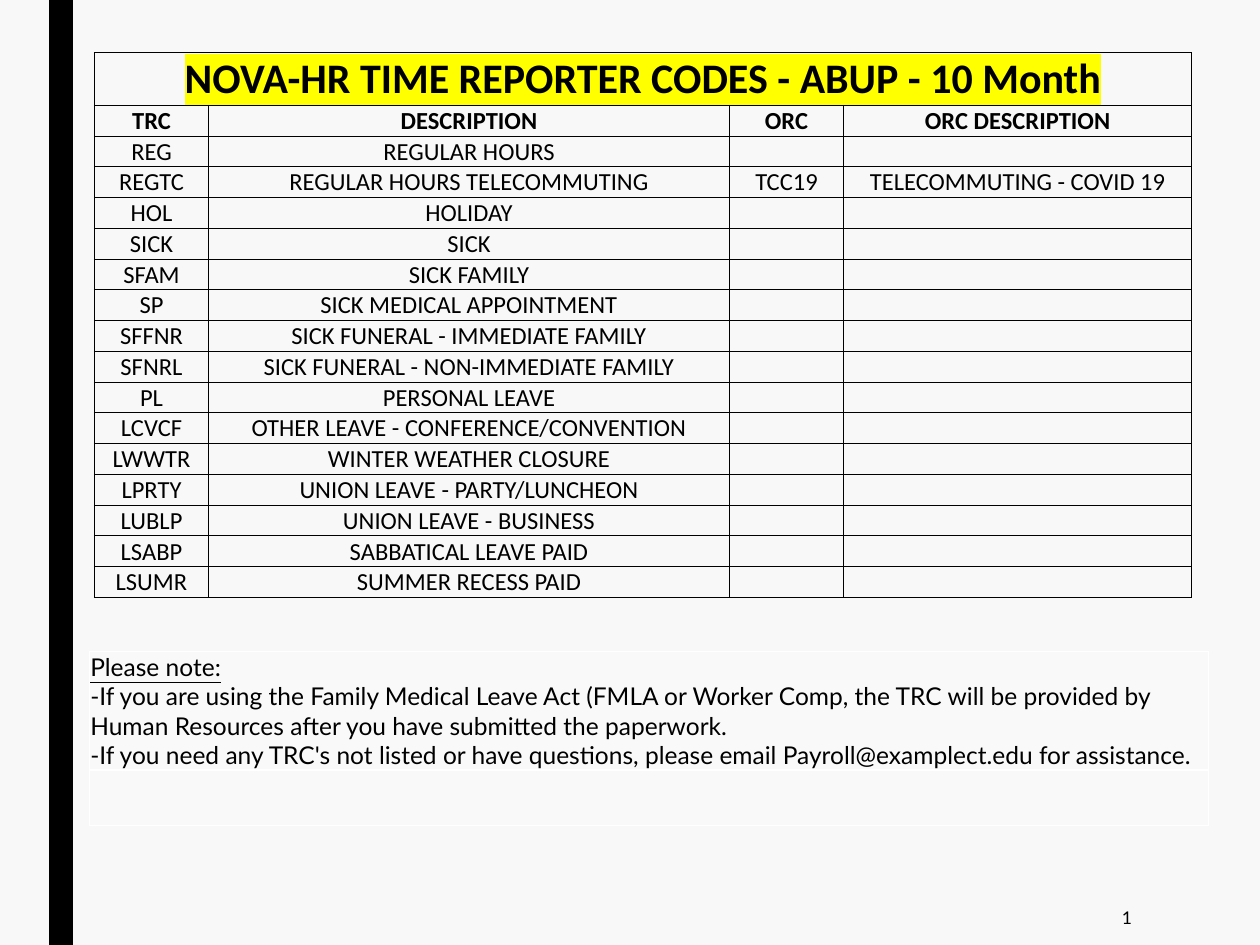
from lxml.etree import SubElement
from pptx import Presentation
from pptx.dml.color import RGBColor
from pptx.enum.shapes import MSO_SHAPE as Shape
from pptx.enum.text import MSO_ANCHOR as Anchor, PP_ALIGN as Align
from pptx.oxml import parse_xml
from pptx.oxml.ns import qn
from pptx.util import Cm, Pt

BLACK = RGBColor(0x00, 0x00, 0x00)
WHITE = RGBColor(0xFF, 0xFF, 0xFF)
YELLOW = RGBColor(0xFF, 0xFF, 0x00)
PAGE_GREY = RGBColor(0xF8, 0xF8, 0xF8)
NOTE_GREY = RGBColor(0xF9, 0xF9, 0xF9)
DRAWING_NS = "http://schemas.openxmlformats.org/drawingml/2006/main"

TITLE = "NOVA-HR TIME REPORTER CODES - ABUP - 10 Month"
HEADINGS = ("TRC", "DESCRIPTION", "ORC", "ORC DESCRIPTION")
CODES = [
    ("REG", "REGULAR HOURS"),
    ("REGTC", "REGULAR HOURS TELECOMMUTING", "TCC19", "TELECOMMUTING - COVID 19"),
    ("HOL", "HOLIDAY"),
    ("SICK", "SICK"),
    ("SFAM", "SICK FAMILY"),
    ("SP", "SICK MEDICAL APPOINTMENT"),
    ("SFFNR", "SICK FUNERAL - IMMEDIATE FAMILY"),
    ("SFNRL", "SICK FUNERAL - NON-IMMEDIATE FAMILY"),
    ("PL", "PERSONAL LEAVE"),
    ("LCVCF", "OTHER LEAVE - CONFERENCE/CONVENTION"),
    ("LWWTR", "WINTER WEATHER CLOSURE"),
    ("LPRTY", "UNION LEAVE - PARTY/LUNCHEON"),
    ("LUBLP", "UNION LEAVE - BUSINESS"),
    ("LSABP", "SABBATICAL LEAVE PAID"),
    ("LSUMR", "SUMMER RECESS PAID"),
]
NOTES = [
    "Please note:",
    "-If you are using the Family Medical Leave Act (FMLA or Worker Comp, the TRC will be "
    "provided by Human Resources after you have submitted the paperwork.",
    "-If you need any TRC's not listed or have questions, please email "
    "Payroll@examplect.edu for assistance.",
]


def add_span(para, text, size, face, bold=False, underline=False):
    span = para.add_run()
    span.text = text
    font = span.font
    font.size, font.name, font.bold = Pt(size), face, bold
    font.underline = underline
    font.color.rgb = BLACK
    return span


def highlight(span, color):
    mark = parse_xml(
        f'<a:highlight xmlns:a="{DRAWING_NS}"><a:srgbClr val="{color}"/></a:highlight>'
    )
    span.font._element.find(qn("a:solidFill")).addnext(mark)


def style_cell(cell, border, width, fill=None):
    cell.margin_left = cell.margin_right = cell.margin_top = Cm(0.02)
    cell.margin_bottom = 0
    cell.vertical_anchor = Anchor.BOTTOM
    properties = cell._tc.get_or_add_tcPr()
    for side in ("lnL", "lnR", "lnT", "lnB"):
        line = SubElement(properties, qn(f"a:{side}"), w=str(Pt(width)))
        paint = SubElement(line, qn("a:solidFill"))
        SubElement(paint, qn("a:srgbClr"), val=str(border))
    if fill is None:
        cell.fill.background()
    else:
        cell.fill.solid()
        cell.fill.fore_color.rgb = fill


def add_grid(page, left, top, widths, heights, border, width, fill=None):
    frame = page.shapes.add_table(
        len(heights), len(widths), Cm(left), Cm(top), Cm(sum(widths)), Cm(sum(heights))
    )
    table = frame.table
    table.first_row = table.horz_banding = False
    for column, size in zip(table.columns, widths):
        column.width = Cm(size)
    for row, size in zip(table.rows, heights):
        row.height = Cm(size)
    for cell in table.iter_cells():
        style_cell(cell, border, width, fill)
    return table


def fill_cell(cell, text, size=14, bold=False):
    para = cell.text_frame.paragraphs[0]
    para.alignment = Align.CENTER
    if text:
        return add_span(para, text, size, "Calibri", bold)
    SubElement(para._p, qn("a:endParaRPr"), sz=str(size * 100))


def add_code_table(page):
    heights = [1.06] + [0.62] * (len(CODES) + 1)
    table = add_grid(page, 1.9, 1.06, [2.31, 10.49, 2.31, 7.01], heights, BLACK, 0.5)
    table.cell(0, 0).merge(table.cell(0, 3))
    highlight(fill_cell(table.cell(0, 0), TITLE, 24, True), YELLOW)
    for row, values in enumerate([HEADINGS] + CODES, start=1):
        for column in range(len(HEADINGS)):
            text = values[column] if column < len(values) else ""
            fill_cell(table.cell(row, column), text, bold=row == 1)


def add_note_table(page):
    table = add_grid(page, 1.8, 13.13, [22.56], [2.38, 1.12], WHITE, 1, NOTE_GREY)
    frame = table.cell(0, 0).text_frame
    for index, text in enumerate(NOTES):
        para = frame.add_paragraph() if index else frame.paragraphs[0]
        add_span(para, text, 14, "Lato", underline=index == 0)


def add_side_bar(page):
    bar = page.shapes.add_shape(Shape.RECTANGLE, Cm(0.99), 0, Cm(0.48), Cm(19.05))
    bar.shadow.inherit = False
    bar.fill.solid()
    bar.fill.fore_color.rgb = BLACK
    bar.line.fill.background()


def add_page_number(page):
    box = page.shapes.add_textbox(Cm(19.74), Cm(17.93), Cm(3.33), Cm(1.12))
    frame = box.text_frame
    frame.word_wrap = True
    frame.vertical_anchor = Anchor.MIDDLE
    para = frame.paragraphs[0]
    para.alignment = Align.RIGHT
    add_span(para, "1", 10, "Lato")


def main():
    deck = Presentation()
    deck.slide_width, deck.slide_height = Cm(25.4), Cm(19.05)
    page = deck.slides.add_slide(deck.slide_layouts[6])
    page.background.fill.solid()
    page.background.fill.fore_color.rgb = PAGE_GREY
    add_side_bar(page)
    add_page_number(page)
    add_code_table(page)
    add_note_table(page)
    deck.save("out.pptx")


if __name__ == "__main__":
    main()
